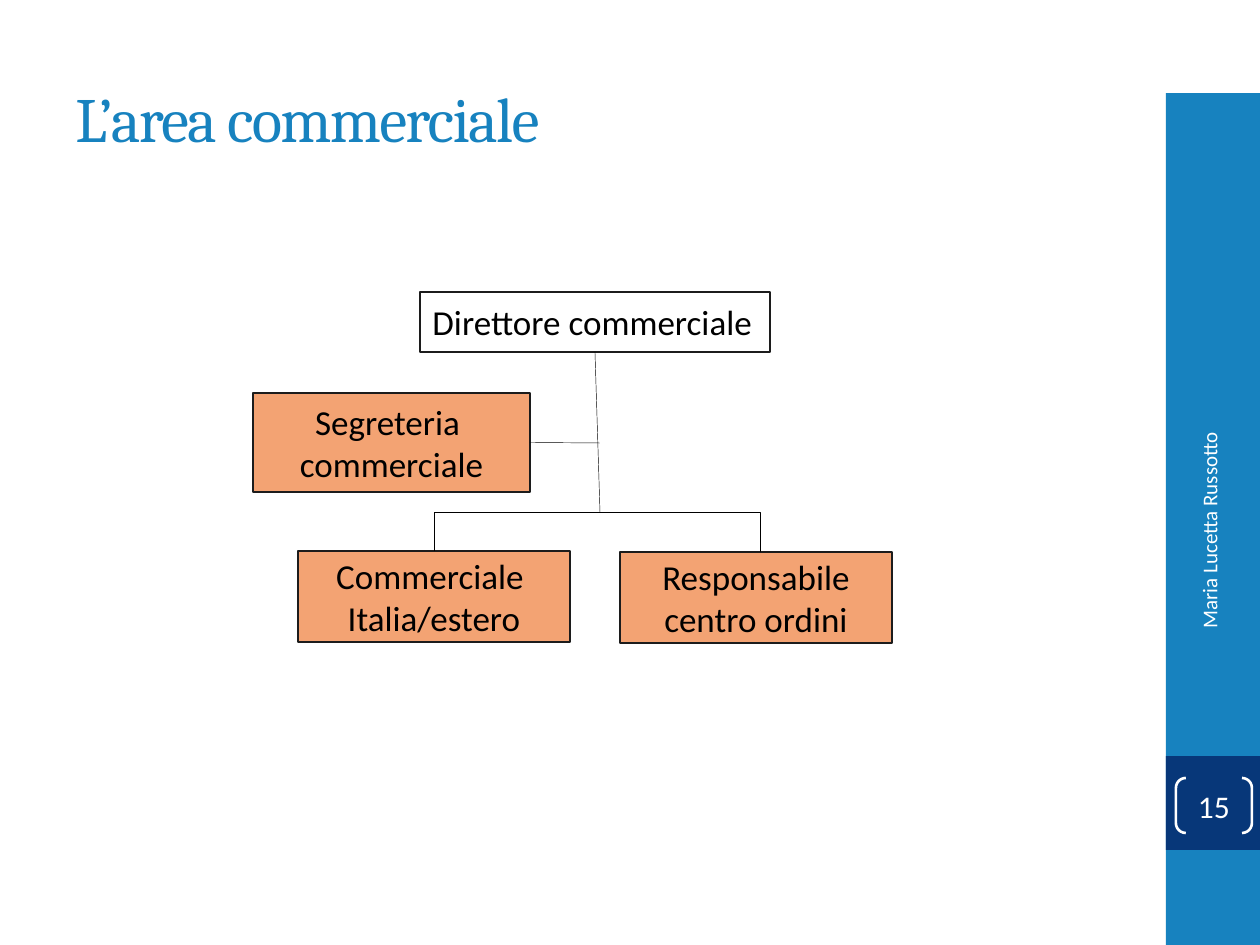
from dataclasses import dataclass

from lxml.etree import SubElement
from pptx import Presentation
from pptx.dml.color import RGBColor
from pptx.enum.shapes import MSO_CONNECTOR, MSO_SHAPE
from pptx.enum.text import MSO_ANCHOR, PP_ALIGN
from pptx.oxml.ns import qn
from pptx.util import Pt

PX = 914400 // 126  # EMU per px


@dataclass(frozen=True)
class Theme:
    blue: str = "1782BF"
    navy: str = "073779"
    orange: str = "F3A373"
    white: str = "FFFFFF"
    black: str = "000000"
    outline: str = "1C1C1C"
    heading: str = "Cambria"
    body: str = "Calibri"
    title_size: int = 36
    box_size: int = 20
    number_size: int = 18
    footer_size: int = 12


T = Theme()


def rgb(value):
    return RGBColor.from_string(value)


def emu(*lengths):
    return [n * PX for n in lengths]


def write(sp, lines, size, color, font=T.body, align=PP_ALIGN.LEFT, wrap=True):
    tf = sp.text_frame
    tf.word_wrap = wrap
    tf.vertical_anchor = MSO_ANCHOR.MIDDLE
    for i, line in enumerate(lines):
        p = tf.paragraphs[0] if i == 0 else tf.add_paragraph()
        p.text = line
        p.alignment = align
        p.font.name, p.font.size = font, Pt(size)
        p.font.color.rgb = rgb(color)
    return tf


def add_box(s, box, fill=None, line=None, width=1, kind=MSO_SHAPE.RECTANGLE):
    sp = s.shapes.add_shape(kind, *emu(*box))
    sp.shadow.inherit = False
    if fill:
        sp.fill.solid()
        sp.fill.fore_color.rgb = rgb(fill)
    else:
        sp.fill.background()
    if line:
        sp.line.color.rgb = rgb(line)
        sp.line.width = Pt(width)
    else:
        sp.line.fill.background()
    return sp


def add_line(s, start, end, bent=False):
    kind = MSO_CONNECTOR.ELBOW if bent else MSO_CONNECTOR.STRAIGHT
    cx = s.shapes.add_connector(kind, *emu(*start, *end))
    cx.line.color.rgb = rgb(T.black)
    cx.line.width = Pt(0.25)
    spPr = cx._element.spPr
    SubElement(spPr, qn("a:effectLst"))
    if bent:  # a single corner: across, then down
        spPr.find(qn("a:prstGeom")).set("prst", "bentConnector2")
    return cx


def add_title(s, box, text):
    sp = s.shapes.add_textbox(*emu(*box))
    tf = write(sp, [text], T.title_size, T.blue, T.heading)
    for r in tf.paragraphs[0].runs:
        r.font._element.set("spc", "-100")


def add_sidebar(s, box, author, number):
    x, y, w, h = box
    add_box(s, box, T.blue)

    # Page number
    tile_y = y + 663
    add_box(s, (x, tile_y, w, w), T.navy)
    sp = add_box(s, (x + 10, tile_y + 22, 76, 55), line=T.white, width=1.5,
                 kind=MSO_SHAPE.DOUBLE_BRACKET)
    sp.adjustments[0] = 0.18
    tf = write(sp, [number], T.number_size, T.white, align=PP_ALIGN.CENTER)
    tf.margin_left = tf.margin_right = tf.margin_top = tf.margin_bottom = 0

    # Author, reading upwards
    sp = s.shapes.add_textbox(*emu(x - 120, y + 465, 326, 50))
    sp.rotation = 270
    write(sp, [author], T.footer_size, T.white, align=PP_ALIGN.RIGHT)


def add_org_chart(s, box):
    x, y, _, _ = box

    def at(dx, dy):
        return x + dx, y + dy

    def unit(dx, dy, w, h, lines, fill=T.orange, align=PP_ALIGN.CENTER):
        sp = add_box(s, (*at(dx, dy), w, h), fill, T.outline)
        write(sp, lines, T.box_size, T.black, align=align, wrap=False)
        return sp

    # Units
    director = unit(167, 0, 350, 60, ["Direttore commerciale"], T.white, PP_ALIGN.LEFT)
    office = unit(0, 101, 277, 99, ["Segreteria ", "commerciale"])
    unit(45, 259, 272, 91, ["Commerciale ", "Italia/estero"])
    unit(367, 260, 272, 91, ["Responsabile", "centro ordini"])

    # Trunk and staff branch
    trunk_x, fork_y = 347, 220
    add_line(s, at(342, 60), at(trunk_x, fork_y)).begin_connect(director, 2)
    add_line(s, at(277, 151), at(trunk_x, 151)).begin_connect(office, 3)

    # Branches to the lower units
    add_line(s, at(trunk_x, fork_y), at(507, 260), bent=True)
    add_line(s, at(trunk_x + 10, fork_y), at(181, 259), bent=True)


def main():
    prs = Presentation()
    prs.slide_width, prs.slide_height = emu(1260, 945)
    s = prs.slides.add_slide(prs.slide_layouts[6])
    add_sidebar(s, (1166, 93, 94, 852), "Maria Lucetta Russotto", "15")
    add_org_chart(s, (253, 292, 639, 351))
    add_title(s, (63, 38, 1050, 158), "L’area commerciale")
    prs.save("out.pptx")


if __name__ == "__main__":
    main()
